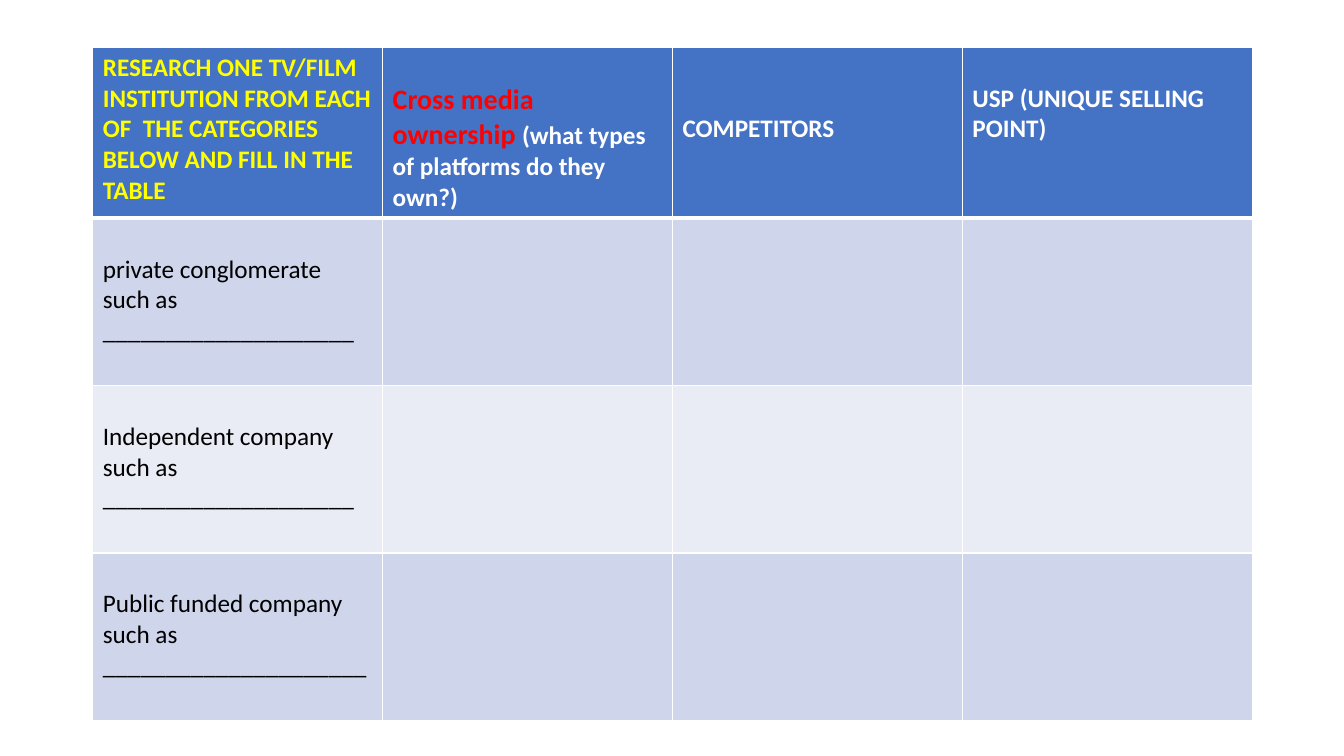
from dataclasses import dataclass

from lxml.etree import SubElement
from pptx import Presentation
from pptx.dml.color import RGBColor as RGB
from pptx.oxml.ns import qn
from pptx.util import Inches, Pt


@dataclass(frozen=True)
class Theme:
    font: str = "Calibri"
    body_size: int = 18
    accent_size: int = 20
    header_fill: str = "4472C4"
    bands: tuple = ("CFD5EA", "E9EBF5")
    border: str = "FFFFFF"
    prompt: str = "FFFF00"
    accent: str = "FF0000"
    header_text: str = "FFFFFF"
    body_text: str = "000000"


THEME = Theme()

# Each heading: lines left free above it, then (text, size, colour) runs
HEADINGS = [
    (0, [("RESEARCH ONE TV/FILM INSTITUTION FROM EACH OF  THE CATEGORIES "
          "BELOW AND FILL IN THE TABLE", THEME.body_size, THEME.prompt)]),
    (1, [("Cross media ownership ", THEME.accent_size, THEME.accent),
         ("(what types of platforms do they own?)",
          THEME.body_size, THEME.header_text)]),
    (2, [("COMPETITORS", THEME.body_size, THEME.header_text)]),
    (1, [("USP (UNIQUE SELLING POINT)", THEME.body_size, THEME.header_text)]),
]
# Each category: description and length of its answer line
CATEGORIES = [
    ("private conglomerate such as", 20),
    ("Independent company such as", 20),
    ("Public funded company such as", 21),
]

LEFT, TOP, WIDTH, HEIGHT = 0.92, 0.47, 11.5, 6.64
CELL_MARGIN = 0.05
LINE_HEIGHT = 1.22 * THEME.body_size / 72


def style_cell(cell, fill, top_width=1, bottom_width=1):
    """Draw the cell's borders, then its fill, in schema order."""
    properties = cell._tc.get_or_add_tcPr()
    widths = {"a:lnL": 1, "a:lnR": 1, "a:lnT": top_width, "a:lnB": bottom_width}
    for side, width in widths.items():
        border = SubElement(properties, qn(side), w=str(Pt(width)))
        solid = SubElement(border, qn("a:solidFill"))
        SubElement(solid, qn("a:srgbClr"), val=THEME.border)
    cell.fill.solid()
    cell.fill.fore_color.rgb = RGB.from_string(fill)


def write_cell(cell, paragraphs, free_lines, bold):
    cell.margin_top = Inches(CELL_MARGIN + free_lines * LINE_HEIGHT)
    frame = cell.text_frame
    for index, runs in enumerate(paragraphs):
        paragraph = frame.add_paragraph() if index else frame.paragraphs[0]
        paragraph.font.name = THEME.font
        paragraph.font.bold = bold
        for text, size, color in runs:
            run = paragraph.add_run()
            run.text = text
            run.font.size = Pt(size)
            run.font.color.rgb = RGB.from_string(color)


def main():
    deck = Presentation()
    deck.slide_width, deck.slide_height = Inches(13.33), Inches(7.5)
    slide = deck.slides.add_slide(deck.slide_layouts[6])
    table = slide.shapes.add_table(
        len(CATEGORIES) + 1, len(HEADINGS),
        Inches(LEFT), Inches(TOP), Inches(WIDTH), Inches(HEIGHT)).table

    for column, (free_lines, runs) in enumerate(HEADINGS):
        heading = table.cell(0, column)
        style_cell(heading, THEME.header_fill, bottom_width=3)
        write_cell(heading, [runs], free_lines, bold=True)

    for row, (description, answer_length) in enumerate(CATEGORIES, start=1):
        band = THEME.bands[(row - 1) % len(THEME.bands)]
        for column in range(len(HEADINGS)):
            style_cell(table.cell(row, column), band,
                       top_width=3 if row == 1 else 1)
        lines = [[(text, THEME.body_size, THEME.body_text)]
                 for text in (description, "_" * answer_length)]
        write_cell(table.cell(row, 0), lines, free_lines=1, bold=False)

    deck.save("out.pptx")


if __name__ == "__main__":
    main()
